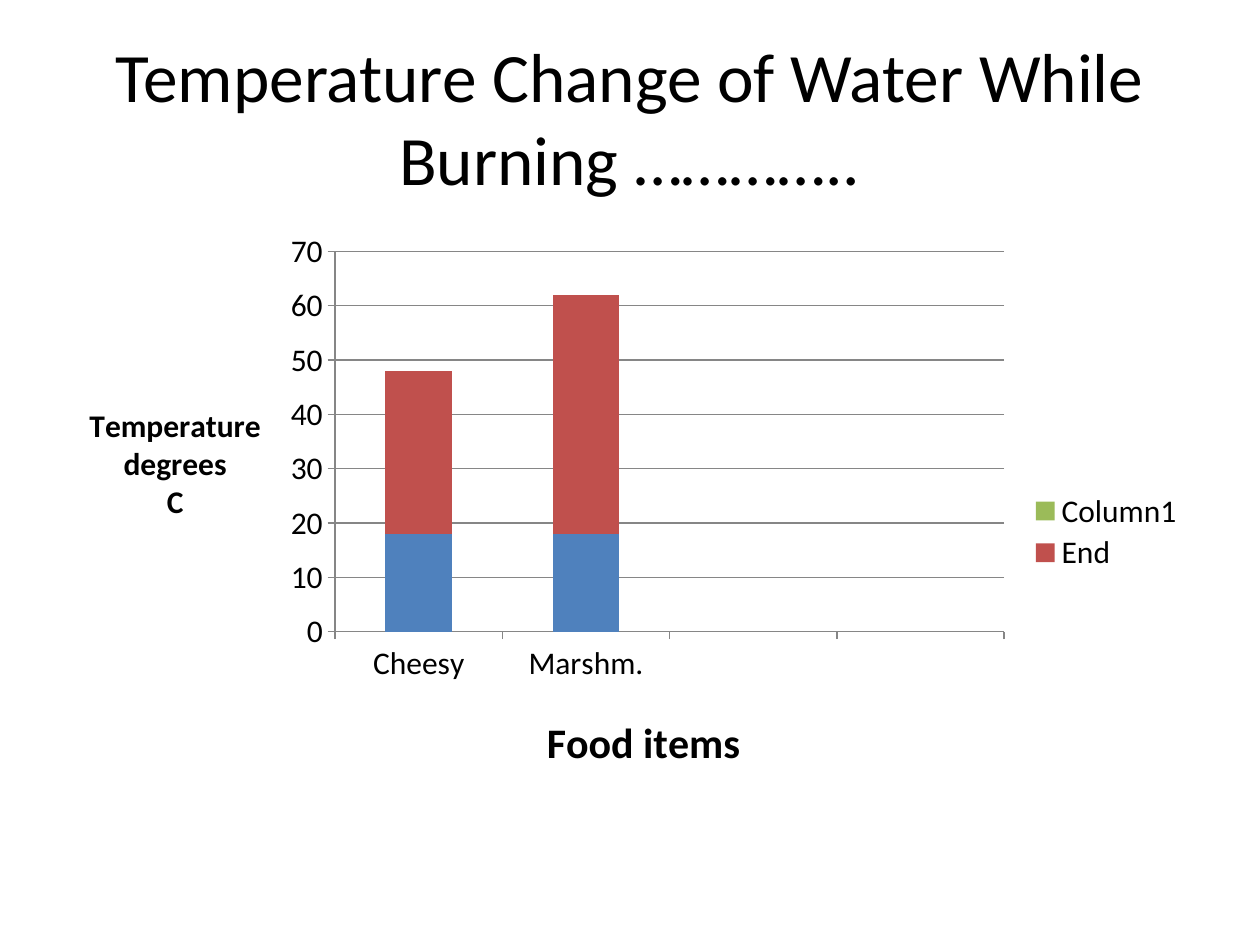
"""Build a slide with a stacked column chart of water temperature by food item."""
from lxml import etree
from pptx import Presentation
from pptx.chart.data import CategoryChartData as Data
from pptx.dml.color import RGBColor
from pptx.enum.chart import XL_CHART_TYPE as Kind, XL_LEGEND_POSITION as Side, XL_TICK_MARK as Tick
from pptx.enum.text import MSO_ANCHOR as Anchor, MSO_AUTO_SIZE as Fit, PP_ALIGN as Align
from pptx.oxml.ns import qn
from pptx.util import Emu, Pt

PX = 914400 // 126
BLACK = RGBColor(0x00, 0x00, 0x00)
GRAY = RGBColor(0x86, 0x86, 0x86)
BLUE = RGBColor(0x4F, 0x81, 0xBD)
RED = RGBColor(0xC0, 0x50, 0x4D)
GREEN = RGBColor(0x9B, 0xBB, 0x59)
FACE = "Calibri"


def style(font, size, bold=False):
    font.name, font.size, font.bold = FACE, Pt(size), bold
    font.color.rgb = BLACK


def place(node, index, inner=False, **spots):
    for old in node.findall(qn("c:layout")):
        node.remove(old)
    layout = etree.Element(qn("c:layout"))
    manual = etree.SubElement(layout, qn("c:manualLayout"))
    if inner:
        etree.SubElement(manual, qn("c:layoutTarget"), val="inner")
    for key in "xy":
        etree.SubElement(manual, qn(f"c:{key}Mode"), val="edge")
    for key, val in spots.items():
        etree.SubElement(manual, qn(f"c:{key}"), val=str(val))
    node.insert(index, layout)


deck = Presentation()
deck.slide_width, deck.slide_height = Emu(1260 * PX), Emu(945 * PX)
slide = deck.slides.add_slide(deck.slide_layouts[5])

title = slide.shapes.title
title.left, title.top, title.width, title.height = [Emu(n * PX) for n in (63, 38, 1134, 157)]
frame = title.text_frame
frame.text = "Temperature Change of Water While Burning ………….."
frame.word_wrap, frame.auto_size = True, Fit.NONE
frame.vertical_anchor = Anchor.MIDDLE
frame.paragraphs[0].alignment = Align.CENTER
style(frame.paragraphs[0].font, 39.6)

data = Data()
data.categories = ["Cheesy", "Marshm.", "", ""]
data.add_series("Series 1", (18, 18, None, None))
data.add_series("End", (30, 44, None, None))
data.add_series("Column1", (None,) * 4)
box = [Emu(n * PX) for n in (63, 220, 1134, 624)]
chart = slide.shapes.add_chart(Kind.COLUMN_STACKED, *box, data).chart
chart.has_title = False
style(chart.font, 18)
plot = chart.plots[0]
plot.gap_width, plot.overlap, plot.vary_by_categories = 150, 100, False
for series, color in zip(plot.series, (BLUE, RED, GREEN)):
    series.format.fill.solid()
    series.format.fill.fore_color.rgb = color

foods, temps = chart.category_axis, chart.value_axis
temps.minimum_scale, temps.maximum_scale, temps.major_unit = 0, 70, 10
temps.has_major_gridlines = True
for line in (foods.format.line, temps.format.line, temps.major_gridlines.format.line):
    line.color.rgb, line.width = GRAY, Pt(0.75)

names = ((foods, "Food items", 24, 0.42, 0.78), (temps, "Temperature\ndegrees\nC", 18, 0.02, 0.29))
for axis, text, size, x, y in names:
    axis.major_tick_mark, axis.minor_tick_mark = Tick.OUTSIDE, Tick.NONE
    label = axis.axis_title
    label.text_frame.text = text
    for para in label.text_frame.paragraphs:
        style(para.font, size, True)
    body = label._element.find(".//" + qn("a:bodyPr"))
    body.set("rot", "0")
    body.set("vert", "horz")
    place(label._element, 1, x=x, y=y)

chart.has_legend = True
legend = chart.legend
legend.position, legend.include_in_layout = Side.RIGHT, False
style(legend.font, 18)
entry = etree.Element(qn("c:legendEntry"))
etree.SubElement(entry, qn("c:idx"), val="0")
etree.SubElement(entry, qn("c:delete"), val="1")
legend._element.insert(1, entry)
place(legend._element, 2, x=0.85, y=0.43, w=0.14, h=0.14)
area = chart._chartSpace.find(".//" + qn("c:plotArea"))
place(area, 0, inner=True, x=0.24, y=0.05, w=0.59, h=0.61)

deck.save("out.pptx")
